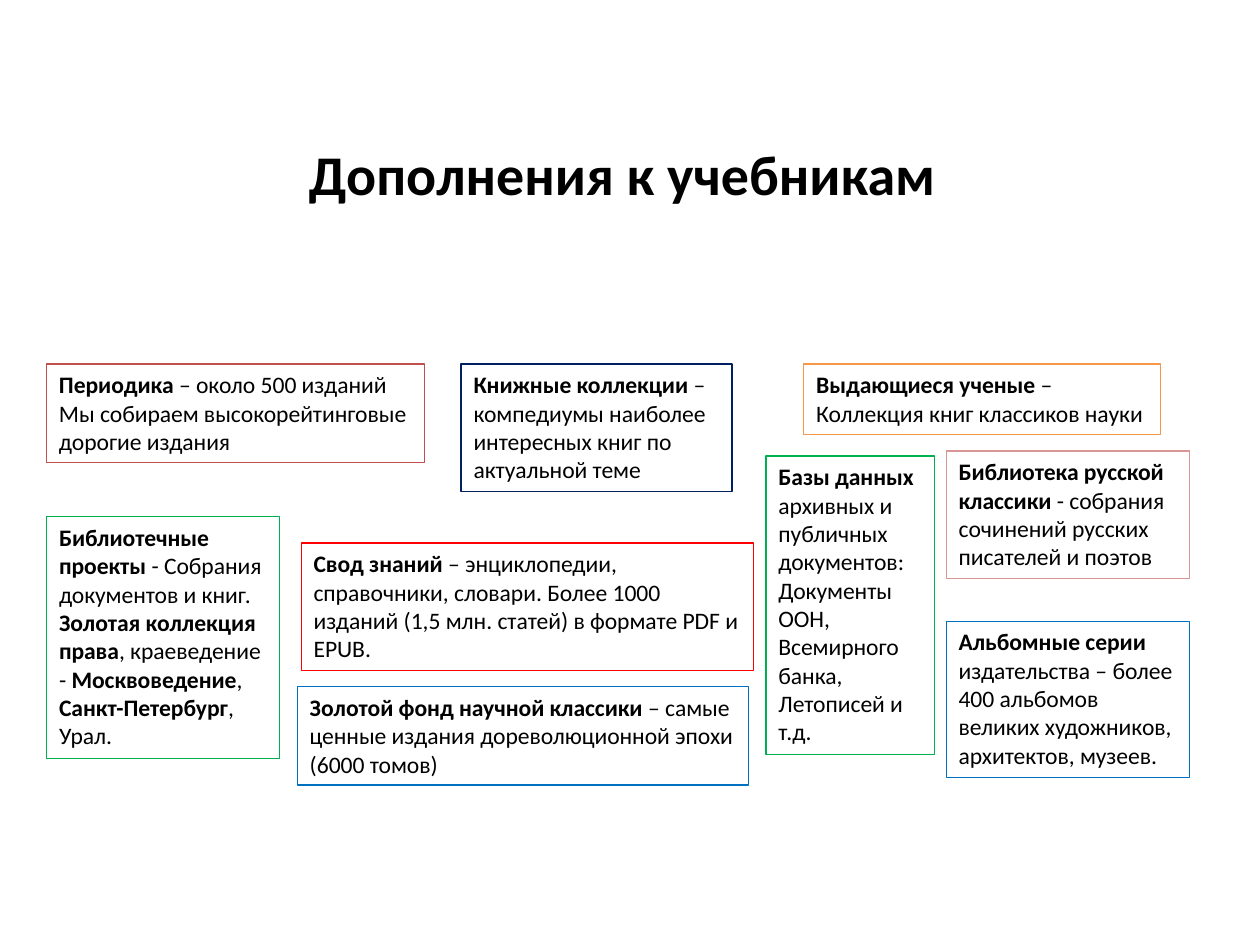
from dataclasses import dataclass

from pptx import Presentation
from pptx.dml.color import RGBColor
from pptx.enum.shapes import MSO_SHAPE
from pptx.enum.text import MSO_ANCHOR, MSO_AUTO_SIZE, PP_ALIGN
from pptx.util import Inches, Pt


@dataclass(frozen=True)
class Theme:
    font: str = "Calibri"
    ink: str = "000000"
    title_size: float = 32
    body_size: float = 13.5
    border_width: float = 0.75
    brick: str = "C0504D"
    navy: str = "002060"
    orange: str = "F79646"
    rose: str = "D99694"
    green: str = "00B050"
    red: str = "FF0000"
    blue: str = "0070C0"


THEME = Theme()
WIDTH, HEIGHT = Inches(10), Inches(7.5)
LEFT_COLUMN, RIGHT_COLUMN, RIGHT_WIDTH = 3.7, 75.1, 19.3
TOP_ROW = 38.53
TWO_LINES, THREE_LINES, FOUR_LINES, FIVE_LINES = 7.47, 10.4, 13.47, 16.53

RESOURCES = [
    (LEFT_COLUMN, TOP_ROW, 30, THREE_LINES, THEME.brick,
     "**Периодика **– около 500 изданий\n"
     "Мы собираем высокорейтинговые дорогие издания"),
    (36.6, TOP_ROW, 21.5, FOUR_LINES, THEME.navy,
     "**Книжные коллекции **– компедиумы наиболее интересных книг по актуальной теме"),
    (63.8, TOP_ROW, 28.3, TWO_LINES, THEME.orange,
     "**Выдающиеся ученые **–\nКоллекция книг классиков науки"),
    (RIGHT_COLUMN, 47.73, RIGHT_WIDTH, FOUR_LINES, THEME.rose,
     "**Библиотека русской классики **- собрания сочинений русских писателей и поэтов"),
    (60.8, 48.27, 13.4, 31.6, THEME.green,
     "**Базы данных **архивных и публичных документов: Документы ООН, "
     "Всемирного банка, Летописей и т.д."),
    (23.9, 57.47, 35.9, FOUR_LINES, THEME.red,
     "**Свод знаний **– энциклопедии, справочники, словари. Более 1000 "
     "изданий (1,5 млн. статей) в формате PDF и EPUB."),
    (LEFT_COLUMN, 54.67, 18.5, 25.6, THEME.green,
     "**Библиотечные проекты **- Собрания документов и книг. "
     "**Золотая коллекция права**, краеведение - **Москвоведение**, "
     "**Санкт-Петербург**, Урал."),
    (23.6, 72.67, 35.8, THREE_LINES, THEME.blue,
     "**Золотой фонд научной классики **– самые ценные издания "
     "дореволюционной эпохи (6000 томов)"),
    (RIGHT_COLUMN, 65.73, RIGHT_WIDTH, FIVE_LINES, THEME.blue,
     "**Альбомные серии **издательства – более 400 альбомов великих "
     "художников, архитектов, музеев."),
]


def place(left, top, width, height):
    return (round(WIDTH * left / 100), round(HEIGHT * top / 100),
            round(WIDTH * width / 100), round(HEIGHT * height / 100))


def write_paragraph(paragraph, marked_text, size, alignment):
    paragraph.alignment = alignment
    paragraph.font.name = THEME.font
    paragraph.font.size = Pt(size)
    paragraph.font.color.rgb = RGBColor.from_string(THEME.ink)
    for index, part in enumerate(marked_text.split("**")):
        if part:
            run = paragraph.add_run()
            run.text = part
            run.font.bold = index % 2 == 1


def add_title(slide, wording):
    frame = slide.shapes.add_textbox(*place(4.4, 10, 90, 16.67)).text_frame
    frame.word_wrap = True
    frame.vertical_anchor = MSO_ANCHOR.MIDDLE
    write_paragraph(frame.paragraphs[0], f"**{wording}**", THEME.title_size, PP_ALIGN.CENTER)


def add_resource(slide, left, top, width, height, border, description):
    card = slide.shapes.add_shape(MSO_SHAPE.RECTANGLE, *place(left, top, width, height))
    card.shadow.inherit = False
    card.fill.background()
    card.line.color.rgb = RGBColor.from_string(border)
    card.line.width = Pt(THEME.border_width)
    frame = card.text_frame
    frame.word_wrap = True
    frame.auto_size = MSO_AUTO_SIZE.SHAPE_TO_FIT_TEXT
    frame.vertical_anchor = MSO_ANCHOR.TOP
    for index, line in enumerate(description.split("\n")):
        paragraph = frame.add_paragraph() if index else frame.paragraphs[0]
        write_paragraph(paragraph, line, THEME.body_size, PP_ALIGN.LEFT)


def main():
    presentation = Presentation()
    presentation.slide_width, presentation.slide_height = WIDTH, HEIGHT
    slide = presentation.slides.add_slide(presentation.slide_layouts[6])
    add_title(slide, "Дополнения к учебникам")
    for resource in RESOURCES:
        add_resource(slide, *resource)
    presentation.save("out.pptx")


if __name__ == "__main__":
    main()
